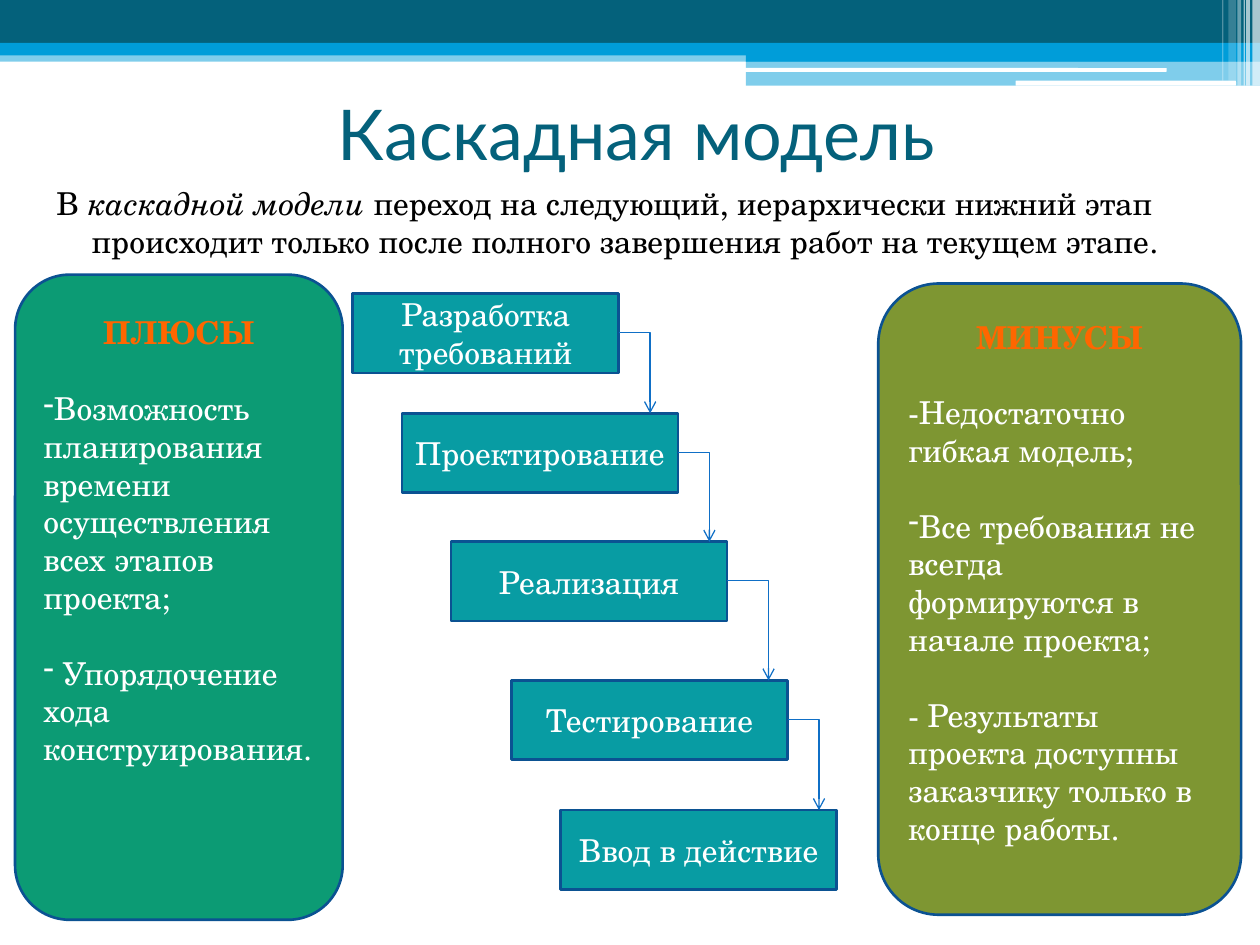
"""Build a slide on the cascade model with its stages, pluses and minuses."""
from lxml import etree
from pptx import Presentation
from pptx import util as u
from pptx.dml.color import RGBColor
from pptx.enum import shapes, text
from pptx.oxml.ns import qn

PX = u.Inches(1) // 100
COLORS = {
    "dark": "04617B", "sky": "009DD9", "white": "FFFFFF", "black": "000000",
    "stage": "089CA3", "border": "0B5292", "arrow": "0F6FC6",
    "plus": "0C9B74", "minus": "7E9632", "heading": "FF6600",
}
RECT = shapes.MSO_SHAPE.RECTANGLE
ROUND = shapes.MSO_SHAPE.ROUNDED_RECTANGLE
CENTER = text.PP_ALIGN.CENTER
LEFT = text.PP_ALIGN.LEFT
MIDDLE = text.MSO_ANCHOR.MIDDLE


class Deck:
    """Hold the style and the current slide."""

    font = "TeX Gyre Schola"
    title_font = "Lato"
    size = 18

    def __init__(self, width, height):
        self.prs = Presentation()
        self.prs.slide_width, self.prs.slide_height = width * PX, height * PX
        self.s = self.prs.slides.add_slide(self.prs.slide_layouts[5])

    def color(self, name):
        return RGBColor.from_string(COLORS[name])

    def style(self, r, color, size=None, font=None, bold=False, italic=False):
        r.font.name, r.font.size = font or self.font, u.Pt(size or self.size)
        r.font.bold, r.font.italic = bold, italic
        r.font.color.rgb = self.color(color)

    def title(self, wording, *box):
        sp = self.s.shapes.title
        sp.left, sp.top, sp.width, sp.height = (v * PX for v in box)
        tf = sp.text_frame
        tf.text, tf.vertical_anchor = wording, MIDDLE
        p = tf.paragraphs[0]
        p.alignment = CENTER
        self.style(p.runs[0], "dark", 40, self.title_font)

    def intro(self, parts, *box):
        sp = self.s.shapes.add_textbox(*(v * PX for v in box))
        sp.text_frame.word_wrap = True
        p = sp.text_frame.paragraphs[0]
        p.space_before = u.Pt(3)
        pPr = p._p.get_or_add_pPr()
        pPr.set("marL", str(40 * PX))
        pPr.set("indent", str(-28 * PX))
        for wording, italic in parts:
            r = p.add_run()
            r.text = wording
            self.style(r, "black", italic=italic)

    def shape(self, kind, fill, *box, line=None, alpha=100):
        sp = self.s.shapes.add_shape(kind, *(v * PX for v in box))
        sp.shadow.inherit = False
        sp.fill.solid()
        sp.fill.fore_color.rgb = self.color(fill)
        if alpha < 100:
            clr = sp._element.spPr.find(".//" + qn("a:srgbClr"))
            etree.SubElement(clr, qn("a:alpha"), val=str(alpha * 1000))
        if line:
            sp.line.color.rgb, sp.line.width = self.color(line), u.Pt(1.5)
        else:
            sp.line.fill.background()
        return sp

    def stage(self, wording, *box):
        tf = self.shape(RECT, "stage", *box, line="border").text_frame
        tf.text, tf.word_wrap, tf.vertical_anchor = wording, True, MIDDLE
        p = tf.paragraphs[0]
        p.alignment = CENTER
        self.style(p.runs[0], "white")

    def panel(self, heading, items, fill, margin, *box):
        tf = self.shape(ROUND, fill, *box, line="border").text_frame
        tf.word_wrap, tf.vertical_anchor = True, text.MSO_ANCHOR.TOP
        tf.margin_top = margin * PX
        tf.text = heading
        p = tf.paragraphs[0]
        p.alignment = CENTER
        self.style(p.runs[0], "heading", bold=True)
        for wording, bullet in items:
            p = tf.add_paragraph()
            p.text, p.alignment, p.space_before = wording, LEFT, u.Pt(21.6)
            self.style(p.runs[0], "white")
            if bullet:
                etree.SubElement(p._p.get_or_add_pPr(), qn("a:buChar"), char="-")

    def arrow(self, x1, y1, x2, y2):
        c = self.s.shapes.add_connector(
            shapes.MSO_CONNECTOR.ELBOW, *(v * PX for v in (x1, y1, x2, y2)))
        c.line.color.rgb, c.line.width = self.color("arrow"), u.Pt(0.75)
        spPr = c._element.spPr
        spPr.find(qn("a:prstGeom")).set("prst", "bentConnector2")
        etree.SubElement(spPr.find(qn("a:ln")), qn("a:tailEnd"), type="arrow")
        etree.SubElement(spPr, qn("a:effectLst"))


BARS = [
    (RECT, "sky", 50, 0, 40, 1000, 9),
    (RECT, "dark", 100, 0, 0, 1000, 34),
    (RECT, "sky", 100, 0, 34, 1000, 10),
    (RECT, "sky", 100, 592, 39, 408, 10),
    (RECT, "sky", 50, 592, 48, 408, 20),
    (ROUND, "white", 100, 591, 54, 335, 3),
    (ROUND, "white", 100, 806, 64, 175, 4),
]
STRIPES = [(994, 6, 68, 65), (989, 3, 68, 65), (987, 1, 68, 60),
           (982, 3, 68, 40), (975, 6, 64, 20), (970, 1, 64, 30)]
STAGES = [
    ("Разработка требований", 280, 233, 211),
    ("Проектирование", 319, 328, 219),
    ("Реализация", 358, 430, 219),
    ("Тестирование", 406, 540, 219),
    ("Ввод в действие", 445, 643, 219),
]
STAGE_HEIGHT = 63
ARROW_REACH = [25, 25, 33, 25]
INTRO = [
    ("В ", False),
    ("каскадной модели ", True),
    ("переход на следующий, иерархически нижний этап происходит только "
     "после полного завершения работ на текущем этапе.", False),
]
PLUSES = [
    ("Возможность планирования времени осуществления всех этапов проекта;", True),
    (" Упорядочение хода конструирования.", True),
]
MINUSES = [
    ("-Недостаточно гибкая модель;", False),
    ("Все требования не всегда формируются в начале проекта;", True),
    ("- Результаты проекта доступны заказчику только в конце работы.", False),
]


def main():
    deck = Deck(1000, 750)
    for kind, fill, alpha, *box in BARS:
        deck.shape(kind, fill, *box, alpha=alpha)
    for left, width, height, alpha in STRIPES:
        deck.shape(RECT, "white", left, 0, width, height, alpha=alpha)
    deck.title("Каскадная модель", 55, 47, 900, 117)
    deck.intro(INTRO, 23, 141, 953, 586)
    for wording, left, top, width in STAGES:
        deck.stage(wording, left, top, width, STAGE_HEIGHT)
    for stage, below, reach in zip(STAGES, STAGES[1:], ARROW_REACH):
        right = stage[1] + stage[3]
        deck.arrow(right, stage[2] + STAGE_HEIGHT // 2, right + reach, below[2])
    deck.panel("ПЛЮСЫ", PLUSES, "plus", 18, 12, 218, 260, 512)
    deck.panel("МИНУСЫ", MINUSES, "minus", 13, 697, 225, 288, 501)
    deck.prs.save("out.pptx")


if __name__ == "__main__":
    main()
